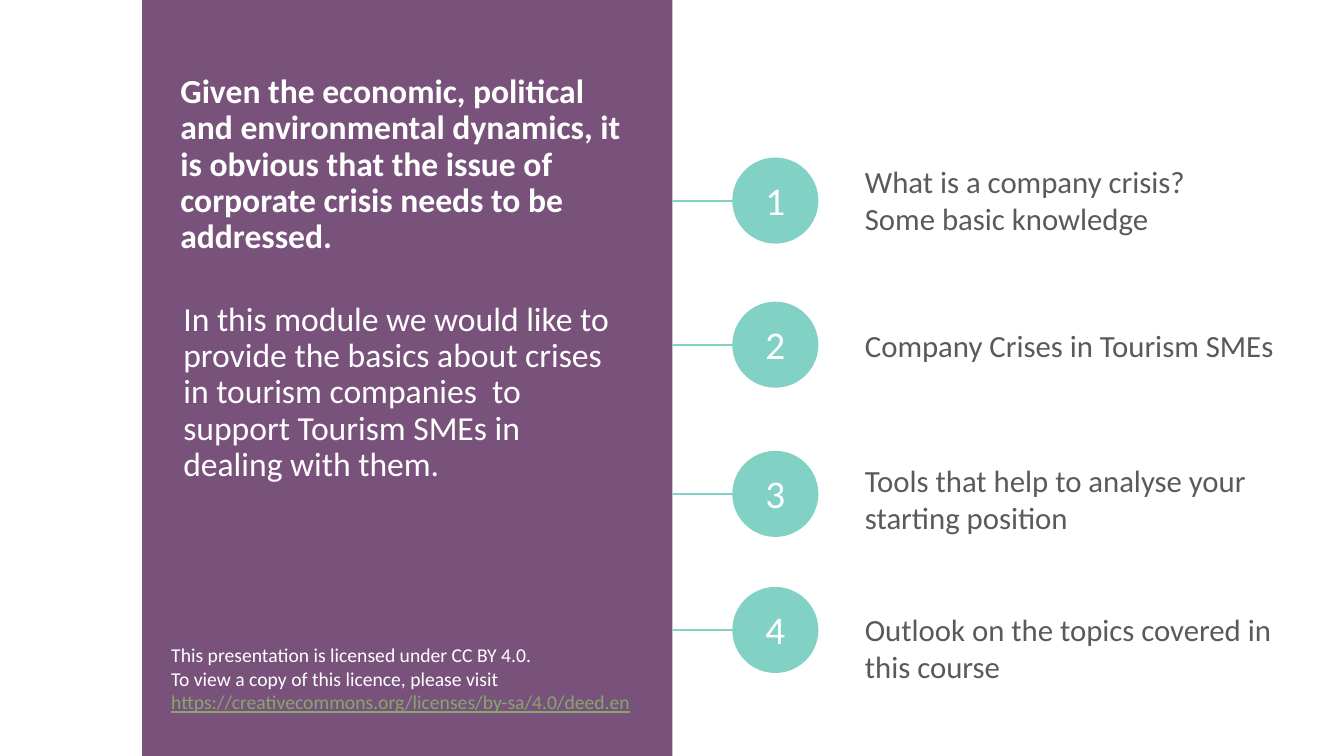
"""Build the module overview slide with an intro panel and four numbered topics."""
from pptx import Presentation
from pptx.dml.color import RGBColor
from pptx.enum.shapes import MSO_CONNECTOR, MSO_SHAPE
from pptx.enum.text import PP_ALIGN
from pptx.oxml.ns import qn
from pptx.util import Inches, Pt
from lxml import etree

COLORS = {"panel": "79527B", "teal": "81D1C5", "text": "595A59",
          "white": "FFFFFF", "link": "87A66E"}


def rgb(name):
    return RGBColor.from_string(COLORS[name])


def add_text(left, top, width, height, lines, size, color, bold=None, align=None, spacing=None):
    tf = s.shapes.add_textbox(Inches(left), Inches(top), Inches(width), Inches(height)).text_frame
    tf.word_wrap = True
    for i, line in enumerate(lines):
        p = tf.paragraphs[0] if i == 0 else tf.add_paragraph()
        p.text = line
        p.alignment = align
        p.line_spacing = spacing
        p.font.name = "Calibri"
        p.font.size = Pt(size)
        p.font.bold = bold
        p.font.color.rgb = rgb(color)
    return tf


prs = Presentation()
prs.slide_width, prs.slide_height = Inches(13.33), Inches(7.5)
s = prs.slides.add_slide(prs.slide_layouts[6])

panel = s.shapes.add_shape(MSO_SHAPE.RECTANGLE, Inches(1.41), 0, Inches(5.26), Inches(7.5))
panel.shadow.inherit = False
panel.fill.solid()
panel.fill.fore_color.rgb = rgb("panel")
panel.line.fill.background()

add_text(1.72, 2.95, 4.57, 2.1,
         ["In this module we would like to provide the basics about crises in tourism "
          "companies  to support Tourism SMEs in dealing with them."],
         24, "white", spacing=0.9)
add_text(1.69, 0.69, 4.65, 1.9,
         ["Given the economic, political and environmental dynamics, it is obvious that "
          "the issue of corporate crisis needs to be addressed."],
         24, "white", bold=True, spacing=0.9)

PANEL_EDGE, CIRCLE_LEFT, DIAMETER = 6.67, 7.27, 0.84
topics = [
    (1.57, 1.57, 0.84, ["What is a company crisis?", "Some basic knowledge"]),
    (3.0, 3.19, 0.47, ["Company Crises in Tourism SMEs"]),
    (4.48, 4.53, 0.84, ["Tools that help to analyse your starting position"]),
    (5.83, 6.01, 0.84, ["Outlook on the topics covered in this course"]),
]
for number, (top, text_top, text_height, lines) in enumerate(topics, 1):
    circle = s.shapes.add_shape(MSO_SHAPE.OVAL, Inches(CIRCLE_LEFT), Inches(top),
                                Inches(DIAMETER), Inches(DIAMETER))
    circle.shadow.inherit = False
    circle.fill.solid()
    circle.fill.fore_color.rgb = rgb("teal")
    circle.line.color.rgb = rgb("teal")
    circle.line.width = Pt(1)

    middle = Inches(top + DIAMETER / 2)
    link = s.shapes.add_connector(MSO_CONNECTOR.STRAIGHT, Inches(PANEL_EDGE), middle,
                                  Inches(CIRCLE_LEFT), middle)
    link.line.color.rgb = rgb("teal")
    link.line.width = Pt(1.5)
    etree.SubElement(link._element.spPr, qn("a:effectLst"))

    add_text(8.48, text_top, 4.35, text_height, lines, 22, "text")
    add_text(7.49, top + 0.13, 0.4, 0.57, [str(number)], 28, "white", align=PP_ALIGN.CENTER)

licence = add_text(1.6, 6.33, 5.09, 0.81,
                   ["This presentation is licensed under CC BY 4.0.",
                    "To view a copy of this licence, please visit "], 14, "white")
r = licence.paragraphs[1].add_run()
r.text = "https://creativecommons.org/licenses/by-sa/4.0/deed.en"
r.font.color.rgb = rgb("link")
r.font.underline = True

prs.save("out.pptx")
